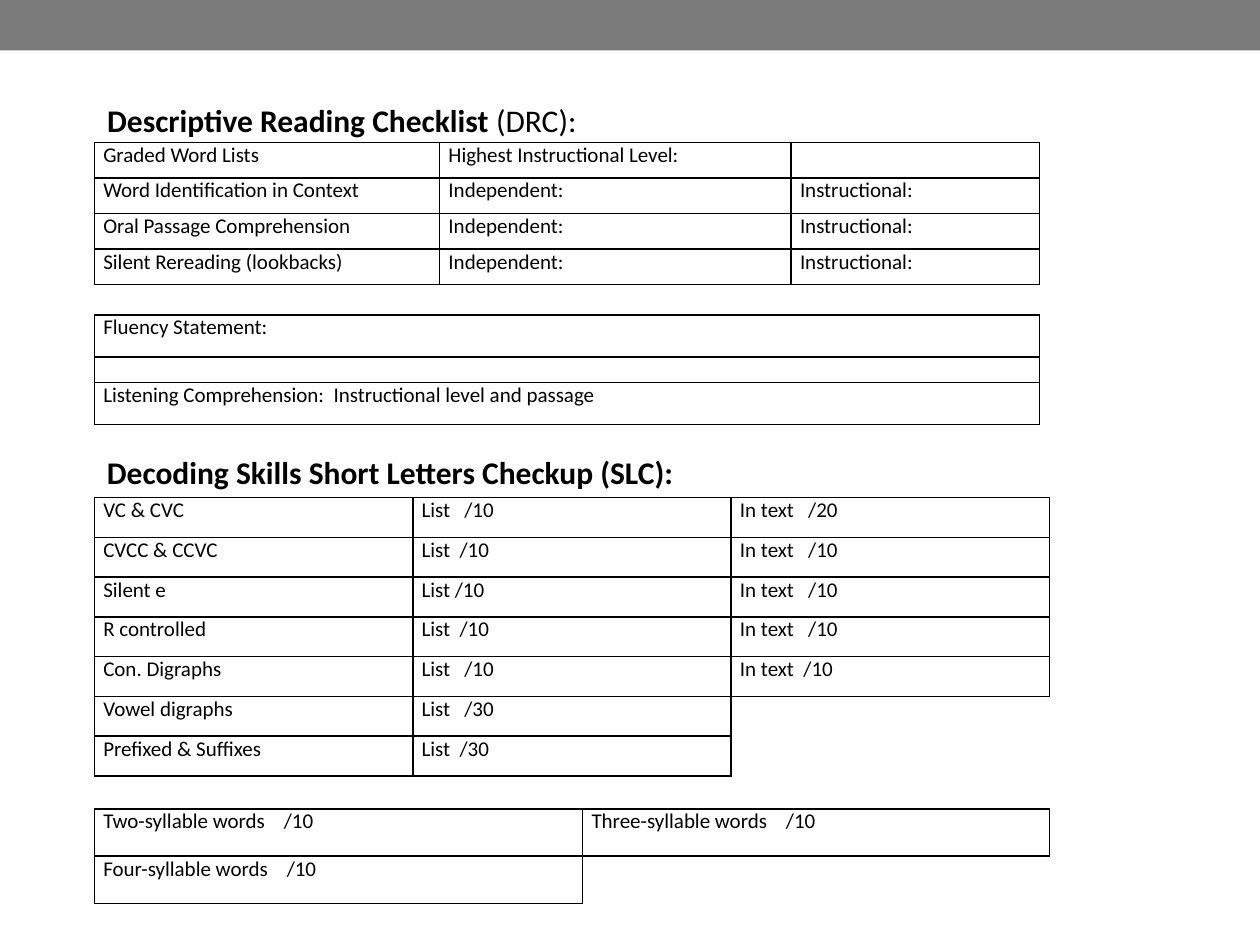
from lxml.etree import SubElement
from pptx import Presentation
from pptx.dml.color import RGBColor
from pptx.enum.shapes import MSO_SHAPE
from pptx.enum.text import MSO_ANCHOR, MSO_AUTO_SIZE, PP_ALIGN
from pptx.oxml.ns import qn
from pptx.util import Inches, Pt

BLACK = RGBColor(0x00, 0x00, 0x00)
GRAY = RGBColor(0x7A, 0x7A, 0x7A)
FONT = "Calibri"
LEFT = 0.75

READING_LEVELS = [["Graded Word Lists", "Highest Instructional Level:", ""]] + [
    [skill, "Independent:", "Instructional:"]
    for skill in ("Word Identification in Context",
                  "Oral Passage Comprehension",
                  "Silent Rereading (lookbacks)")]
STATEMENTS = [["Fluency Statement:"], [""],
              ["Listening Comprehension:  Instructional level and passage"]]
DECODING = [["VC & CVC", "List   /10", "In text   /20"],
            ["CVCC & CCVC", "List  /10", "In text   /10"],
            ["Silent e", "List /10", "In text   /10"],
            ["R controlled", "List  /10", "In text   /10"],
            ["Con. Digraphs", "List   /10", "In text  /10"],
            ["Vowel digraphs", "List   /30", None],
            ["Prefixed & Suffixes", "List  /30", None]]
SYLLABLES = [["Two-syllable words    /10", "Three-syllable words    /10"],
             ["Four-syllable words    /10", None]]


def add_run(p, text, size, bold=False):
    r = p.add_run()
    r.text = text
    r.font.name, r.font.size, r.font.bold = FONT, Pt(size), bold
    r.font.color.rgb = BLACK


def place_heading(sp, box, parts):
    sp.left, sp.top, sp.width, sp.height = map(Inches, box)
    tf = sp.text_frame
    tf.word_wrap = True
    tf.auto_size = MSO_AUTO_SIZE.SHAPE_TO_FIT_TEXT
    tf.vertical_anchor = MSO_ANCHOR.TOP
    p = tf.paragraphs[0]
    p.alignment = PP_ALIGN.LEFT
    for text, bold in parts:
        add_run(p, text, 18, bold)


def set_borders(cell, visible):
    tcPr = cell._tc.get_or_add_tcPr()
    for side in "LRTB":
        ln = SubElement(tcPr, qn(f"a:ln{side}"), w=str(Pt(1)))
        if side in visible:
            fill = SubElement(ln, qn("a:solidFill"))
            SubElement(fill, qn("a:srgbClr"), val=str(BLACK))
        else:
            SubElement(ln, qn("a:noFill"))


def fill_cell(cell, text):
    cell.margin_left = cell.margin_right = Inches(0.07)
    cell.margin_top = cell.margin_bottom = 0
    cell.fill.background()
    p = cell.text_frame.paragraphs[0]
    if text:
        add_run(p, text, 12)
    else:
        SubElement(p._p, qn("a:endParaRPr"), sz="1200")


def add_form(s, box, rows, col_shares, row_shares):
    left, top, width, height = map(Inches, box)
    table = s.shapes.add_table(len(rows), len(col_shares),
                               left, top, width, height).table
    table.first_row = table.horz_banding = False
    for col, share in zip(table.columns, col_shares):
        col.width = int(width * share / sum(col_shares))
    for row, share in zip(table.rows, row_shares):
        row.height = int(height * share / sum(row_shares))
    for i, row in enumerate(rows):
        for j, text in enumerate(row):
            cell = table.cell(i, j)
            if text is not None:
                visible = "LRTB"
            else:
                visible = "LT" if rows[i - 1][j] is not None else "L"
            set_borders(cell, visible)
            fill_cell(cell, text)


def add_band(s, box):
    sp = s.shapes.add_shape(MSO_SHAPE.RECTANGLE, *map(Inches, box))
    sp.shadow.inherit = False
    sp.fill.solid()
    sp.fill.fore_color.rgb = GRAY
    sp.line.fill.background()


def add_reading_section(s, top):
    place_heading(s.shapes.title, (LEFT, top, 7.5, 0.4),
                  [("Descriptive Reading Checklist", True), (" (DRC):", False)])
    add_form(s, (LEFT, top + 0.38, 7.5, 1.13), READING_LEVELS,
             (2.74, 2.79, 1.97), [1] * 4)
    add_form(s, (LEFT, top + 1.75, 7.5, 0.87), STATEMENTS, [1], (5, 3, 5))


def add_decoding_section(s, top):
    sp = s.shapes.add_textbox(0, 0, 0, 0)
    place_heading(sp, (LEFT, top, 6.67, 0.4),
                  [("Decoding Skills Short Letters Checkup (SLC):", True)])
    add_form(s, (LEFT, top + 0.4, 7.58, 2.21), DECODING, [1] * 3, [1] * 7)
    add_form(s, (LEFT, top + 2.87, 7.58, 0.75), SYLLABLES, (3.88, 3.71), [1] * 2)


def main():
    prs = Presentation()
    prs.slide_width, prs.slide_height = Inches(10), Inches(7.5)
    s = prs.slides.add_slide(prs.slide_layouts[5])
    add_band(s, (0, 0, 10, 0.4))
    add_reading_section(s, 0.75)
    add_decoding_section(s, 3.55)
    prs.save("out.pptx")


if __name__ == "__main__":
    main()
